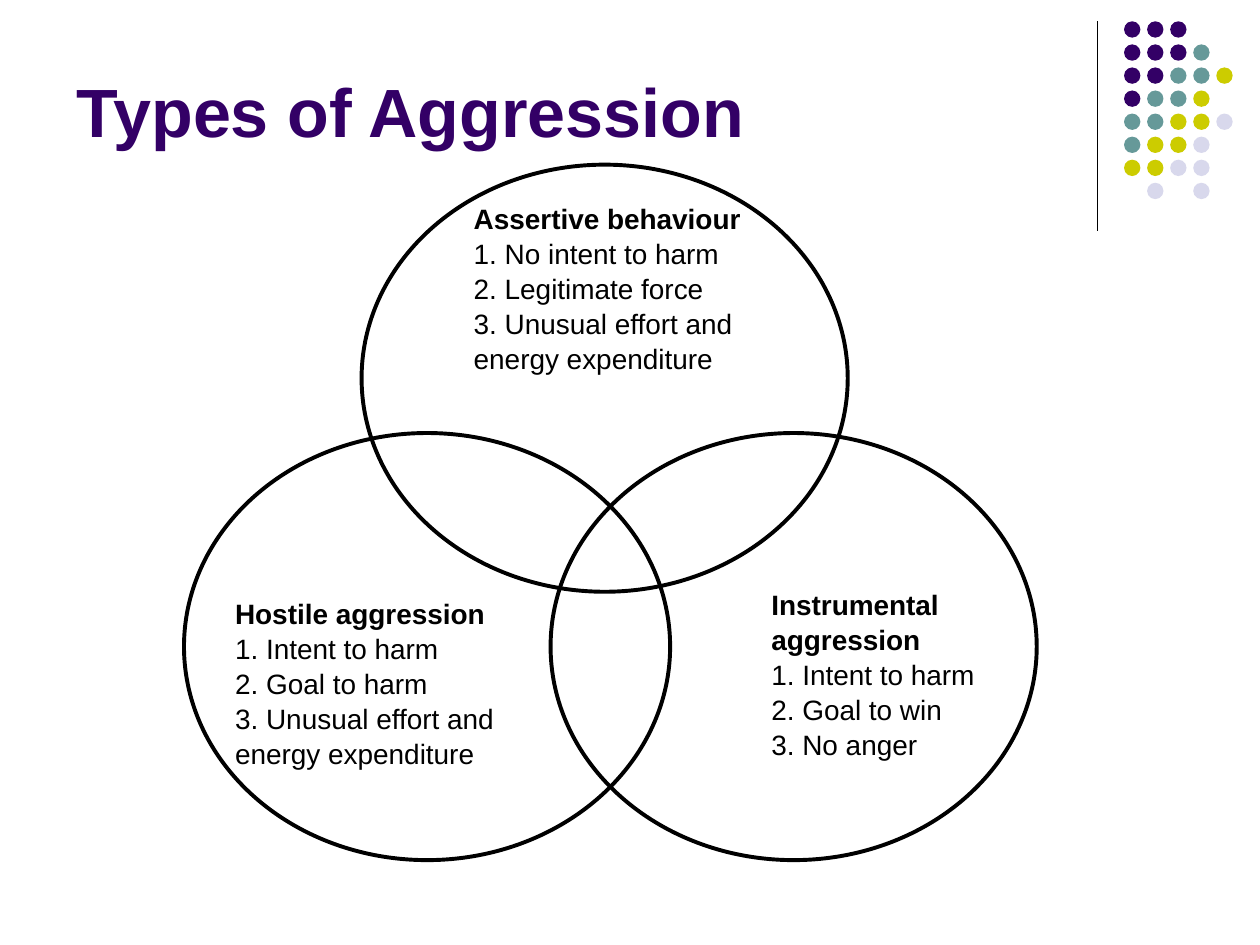
from pptx import Presentation
from pptx.dml.color import RGBColor
from pptx.enum.shapes import MSO_CONNECTOR, MSO_SHAPE
from pptx.enum.text import MSO_ANCHOR
from pptx.oxml.ns import qn
from pptx.util import Cm, Pt
from lxml import etree

FONT = "Arial"
BLACK = RGBColor(0x00, 0x00, 0x00)
PURPLE = RGBColor(0x33, 0x00, 0x66)
TEAL = RGBColor(0x66, 0x99, 0x99)
LIME = RGBColor(0xCC, 0xCC, 0x00)
LAVENDER = RGBColor(0xD8, 0xD8, 0xEC)

# Corner ornament: one letter per dot, a space where there is none
DOT_COLOURS = {"P": PURPLE, "T": TEAL, "L": LIME, "V": LAVENDER}
DOT_ROWS = ["PPP", "PPPT", "PPTTL", "PTTL", "TTLLV", "TLLV", "LLVV", " V V"]
DOT_LEFT, DOT_TOP, DOT_PITCH, DOT_SIZE = 22.66, 0.43, 0.465, 0.33

# Left and top of each circle, in cm
CIRCLE_WIDTH, CIRCLE_HEIGHT = 9.8, 8.61
CIRCLES = [(7.29, 3.32), (11.1, 8.73), (3.71, 8.73)]

# Left, top, width in cm, heading lines, detail lines
LABELS = [
    (9.3, 3.94, 5.92, ["Assertive behaviour"],
     ["1. No intent to harm", "2. Legitimate force",
      "3. Unusual effort and", "energy expenditure"]),
    (4.49, 11.91, 5.92, ["Hostile aggression"],
     ["1. Intent to harm", "2. Goal to harm",
      "3. Unusual effort and", "energy expenditure"]),
    (15.3, 11.72, 4.62, ["Instrumental", "aggression"],
     ["1. Intent to harm", "2. Goal to win", "3. No anger"]),
]


def add_rule(page, x, top, bottom):
    rule = page.shapes.add_connector(
        MSO_CONNECTOR.STRAIGHT, Cm(x), Cm(top), Cm(x), Cm(bottom))
    rule.line.color.rgb = BLACK
    rule.line.width = Pt(0.75)
    properties = rule._element.find(qn("p:spPr"))
    etree.SubElement(properties, qn("a:effectLst"))


def add_ellipse(shapes, left, top, width, height):
    ellipse = shapes.add_shape(
        MSO_SHAPE.OVAL, Cm(left), Cm(top), Cm(width), Cm(height))
    ellipse.shadow.inherit = False
    return ellipse


def add_dots(page):
    group = page.shapes.add_group_shape()
    for row, letters in enumerate(DOT_ROWS):
        for column, letter in enumerate(letters):
            if letter == " ":
                continue
            dot = add_ellipse(
                group.shapes, DOT_LEFT + column * DOT_PITCH,
                DOT_TOP + row * DOT_PITCH, DOT_SIZE, DOT_SIZE)
            dot.fill.solid()
            dot.fill.fore_color.rgb = DOT_COLOURS[letter]
            dot.line.fill.background()


def add_circle(page, left, top):
    circle = add_ellipse(page.shapes, left, top, CIRCLE_WIDTH, CIRCLE_HEIGHT)
    circle.fill.background()
    circle.line.color.rgb = BLACK
    circle.line.width = Pt(2.25)


def add_text(page, left, top, width, height, lines, size, colour,
             anchor=MSO_ANCHOR.TOP):
    """Add a text box; lines holds pairs of wording and boldness."""
    box = page.shapes.add_textbox(Cm(left), Cm(top), Cm(width), Cm(height))
    frame = box.text_frame
    frame.word_wrap = True
    frame.margin_right = 0
    frame.vertical_anchor = anchor
    for index, (wording, bold) in enumerate(lines):
        para = frame.add_paragraph() if index else frame.paragraphs[0]
        para.space_after = Pt(0.8)
        span = para.add_run()
        span.text = wording
        span.font.name = FONT
        span.font.size = Pt(size)
        span.font.bold = bold
        span.font.color.rgb = colour


def add_label(page, left, top, width, heading, details):
    lines = [(line, True) for line in heading]
    lines += [(line, False) for line in details]
    add_text(page, left, top, width, 4.32, lines, 16, BLACK)


def main():
    deck = Presentation()
    deck.slide_width, deck.slide_height = Cm(25.4), Cm(19.05)
    page = deck.slides.add_slide(deck.slide_layouts[6])

    # Corner ornament
    add_rule(page, 22.12, 0.43, 4.65)
    add_dots(page)

    # Title
    add_text(page, 1.3, 0, 22.86, 3.18, [("Types of Aggression", True)],
             39, PURPLE, MSO_ANCHOR.BOTTOM)

    # Overlapping circles and their labels
    for circle in CIRCLES:
        add_circle(page, *circle)
    for label in LABELS:
        add_label(page, *label)

    deck.save("out.pptx")


if __name__ == "__main__":
    main()
